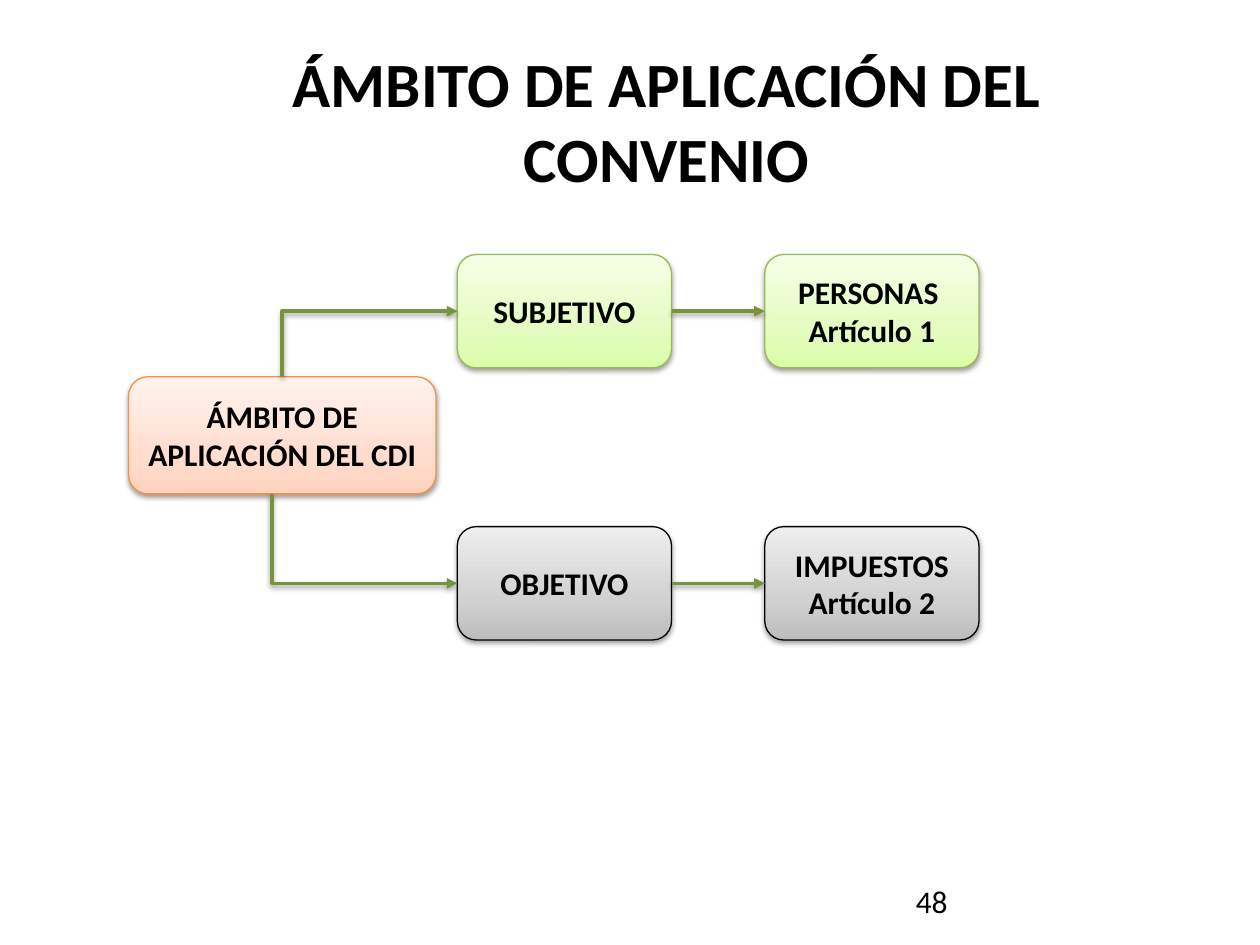
from collections import namedtuple
from copy import deepcopy

from lxml.etree import SubElement
from pptx import Presentation
from pptx.dml.color import RGBColor
from pptx.enum.shapes import MSO_CONNECTOR, MSO_SHAPE
from pptx.enum.text import MSO_ANCHOR, MSO_AUTO_SIZE, PP_ALIGN
from pptx.oxml.ns import qn
from pptx.util import Inches, Pt

Box = namedtuple("Box", "left top width height")
Palette = namedtuple("Palette", "stops line")

ORANGE = Palette(("FFD2BD", "FFDED0", "FFF2ED"), "F69240")
GREEN = Palette(("DAFDA7", "E4FCC2", "F5FFE7"), "98B955")
GREY = Palette(("BDBDBD", "D1D1D1", "EEEEEE"), "000000")
STOP_POSITIONS = (0, 0.35, 1)
ARROW_COLOUR = "77933C"


def colour(value):
    """Return the colour for a hex string."""
    return RGBColor.from_string(value)


def emu(box):
    """Return the sides of a box in inches as lengths."""
    return [Inches(side) for side in box]


def write(shape, text, size=18, bold=True, align=PP_ALIGN.CENTER, anchor=MSO_ANCHOR.MIDDLE, after=None):
    """Fill a shape with one paragraph for each line of text."""
    frame = shape.text_frame
    frame.word_wrap = True
    frame.auto_size = MSO_AUTO_SIZE.NONE
    frame.vertical_anchor = anchor
    for index, line in enumerate(text.split("\n")):
        para = frame.add_paragraph() if index else frame.paragraphs[0]
        para.alignment = align
        if after is not None:
            para.space_after = Pt(after)
        span = para.add_run()
        span.text = line
        span.font.name = "Calibri"
        span.font.size = Pt(size)
        span.font.bold = bold
        span.font.color.rgb = colour("000000")


def add_shadow(properties):
    """Give shape properties a soft shadow that falls downwards."""
    effects = properties.find(qn("a:effectLst"))
    if effects is None:
        effects = SubElement(properties, qn("a:effectLst"))
    shadow = SubElement(effects, qn("a:outerShdw"), blurRad="40000", dist="20000", dir="5400000", rotWithShape="0")
    black = SubElement(shadow, qn("a:srgbClr"), val="000000")
    SubElement(black, qn("a:alpha"), val="38000")


def add_node(page, box, text, palette):
    """Draw one rounded box of the diagram."""
    node = page.shapes.add_shape(MSO_SHAPE.ROUNDED_RECTANGLE, *emu(box))
    node.fill.gradient()
    node.fill.gradient_angle = 90
    stop_list = node._element.spPr.find(qn("a:gradFill")).find(qn("a:gsLst"))
    stop_list.append(deepcopy(stop_list[0]))
    for stop, position, value in zip(node.fill.gradient_stops, STOP_POSITIONS, palette.stops):
        stop.position = position
        stop.color.rgb = colour(value)
    node.line.color.rgb = colour(palette.line)
    node.line.width = Pt(0.75)
    node.shadow.inherit = False
    add_shadow(node._element.spPr)
    write(node, text)
    return node


def style_arrow(arrow):
    """Give a connector its line, arrowhead and shadow."""
    arrow.line.color.rgb = colour(ARROW_COLOUR)
    arrow.line.width = Pt(2)
    properties = arrow._element.spPr
    SubElement(properties.find(qn("a:ln")), qn("a:tailEnd"), type="triangle")
    add_shadow(properties)


def add_straight_arrow(page, source, target):
    """Join the right side of one node to the left side of the next."""
    arrow = page.shapes.add_connector(MSO_CONNECTOR.STRAIGHT, 0, 0, 0, 0)
    arrow.begin_connect(source, 3)
    arrow.end_connect(target, 1)
    style_arrow(arrow)


def add_corner_arrow(page, start, end):
    """Draw an arrow that leaves vertically and arrives from the left."""
    (x1, y1), (x2, y2) = start, end
    middle_x, middle_y = (x1 + x2) / 2, (y1 + y2) / 2
    half_width, half_height = abs(y2 - y1) / 2, (x2 - x1) / 2
    turn = 1 if y2 > y1 else -1
    corners = (middle_x + half_width, middle_y - turn * half_height,
               middle_x - half_width, middle_y + turn * half_height)
    arrow = page.shapes.add_connector(MSO_CONNECTOR.ELBOW, *emu(corners))
    properties = arrow._element.spPr
    properties.find(qn("a:prstGeom")).set("prst", "bentConnector2")
    properties.find(qn("a:xfrm")).set("rot", "16200000" if turn > 0 else "5400000")
    style_arrow(arrow)


def add_branch(page, box, start, texts, palette):
    """Draw a row of two nodes and the arrows that lead through it."""
    node_width = 1.7
    step = box.width - node_width
    nodes = [add_node(page, Box(box.left + column * step, box.top, node_width, box.height), text, palette)
             for column, text in enumerate(texts)]
    add_corner_arrow(page, start, (box.left, box.top + box.height / 2))
    add_straight_arrow(page, *nodes)


def add_diagram(page, box):
    """Draw the root node and its upper and lower branches."""
    row = 0.9
    root = Box(box.left, box.top + 0.97, 2.44, 0.93)
    add_node(page, root, "ÁMBITO DE APLICACIÓN DEL CDI", ORANGE)
    left = box.left + 2.61
    width = box.width - 2.61
    centre = root.left + root.width / 2
    add_branch(page, Box(left, box.top, width, row), (centre, root.top),
               ("SUBJETIVO", "PERSONAS \nArtículo 1"), GREEN)
    add_branch(page, Box(left, box.top + box.height - row, width, row), (centre - 0.08, root.top + root.height),
               ("OBJETIVO", "IMPUESTOS\nArtículo 2"), GREY)


def add_title(page, box):
    """Place and write the slide title."""
    title = page.shapes.title
    title.left, title.top, title.width, title.height = emu(box)
    write(title, "ÁMBITO DE APLICACIÓN DEL CONVENIO", size=36, anchor=MSO_ANCHOR.TOP)


def add_page_number(page, box):
    """Write the page number."""
    number = page.shapes.add_textbox(*emu(box))
    write(number, "48", bold=False, align=PP_ALIGN.LEFT, anchor=MSO_ANCHOR.TOP, after=6)


def main():
    """Build the slide and save the deck."""
    deck = Presentation()
    deck.slide_width, deck.slide_height = Inches(10), Inches(7.5)
    page = deck.slides.add_slide(deck.slide_layouts[5])
    add_title(page, Box(1.08, 0.3, 8.42, 1.25))
    add_diagram(page, Box(1.02, 2.02, 6.75, 3.06))
    add_page_number(page, Box(7.17, 6.95, 2.33, 0.4))
    deck.save("out.pptx")


if __name__ == "__main__":
    main()
